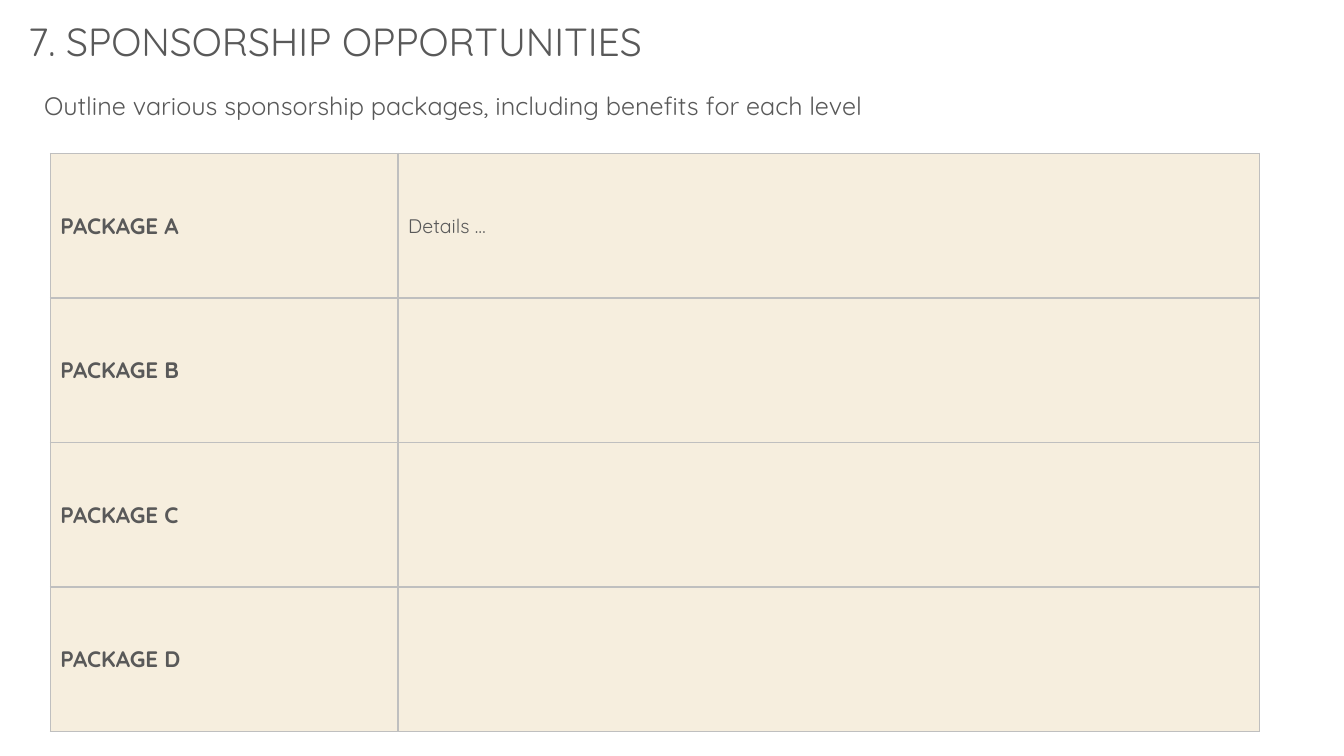
from lxml import etree
from pptx import Presentation
from pptx.dml.color import RGBColor
from pptx.enum.text import MSO_ANCHOR
from pptx.oxml.ns import qn
from pptx.util import Cm, Pt

MIDDLE = MSO_ANCHOR.MIDDLE
FONT = "Quicksand"
GREY = RGBColor(0x59, 0x59, 0x59)
CREAM = RGBColor(0xF6, 0xEE, 0xDE)
BORDER = RGBColor(0xBF, 0xBF, 0xBF)


def write(frame, text, size, bold=False):
    paragraph = frame.paragraphs[0]
    paragraph.text = text
    font = paragraph.font
    font.name, font.size, font.bold = FONT, Pt(size), bold
    font.color.rgb = GREY


def add_borders(cell):
    properties = cell._tc.get_or_add_tcPr()
    for position, side in enumerate(("lnL", "lnR", "lnT", "lnB")):
        line = etree.Element(qn(f"a:{side}"), w=str(Pt(1)))
        fill = etree.SubElement(line, qn("a:solidFill"))
        etree.SubElement(fill, qn("a:srgbClr"), val=str(BORDER))
        properties.insert(position, line)


prs = Presentation()
prs.slide_width, prs.slide_height = Cm(33.87), Cm(19.05)
slide = prs.slides.add_slide(prs.slide_layouts[6])

headings = [
    ("7. SPONSORSHIP OPPORTUNITIES", 28, 0.46, 0.3, 32.89, 1.45),
    ("Outline various sponsorship packages, including benefits for each level",
     18, 0.86, 2.16, 32.46, 1.02),
]
for text, size, left, top, width, height in headings:
    heading = slide.shapes.add_textbox(Cm(left), Cm(top), Cm(width), Cm(height))
    heading.text_frame.word_wrap = True
    write(heading.text_frame, text, size)

packages = [
    ("PACKAGE A", "Details …"),
    ("PACKAGE B", ""),
    ("PACKAGE C", ""),
    ("PACKAGE D", ""),
]
table = slide.shapes.add_table(
    len(packages), 2, Cm(1.27), Cm(3.87), Cm(30.48), Cm(14.56)).table
table.first_row = table.horz_banding = False
table.columns[0].width = Cm(8.76)
table.columns[1].width = Cm(21.72)

for row, (package, details) in enumerate(packages):
    table.rows[row].height = Cm(3.64)
    for column, (text, size, bold) in enumerate(
            [(package, 16, True), (details, 14, False)]):
        cell = table.cell(row, column)
        cell.vertical_anchor = MIDDLE
        cell.fill.solid()
        cell.fill.fore_color.rgb = CREAM
        add_borders(cell)
        write(cell.text_frame, text, size, bold)

prs.save("out.pptx")
